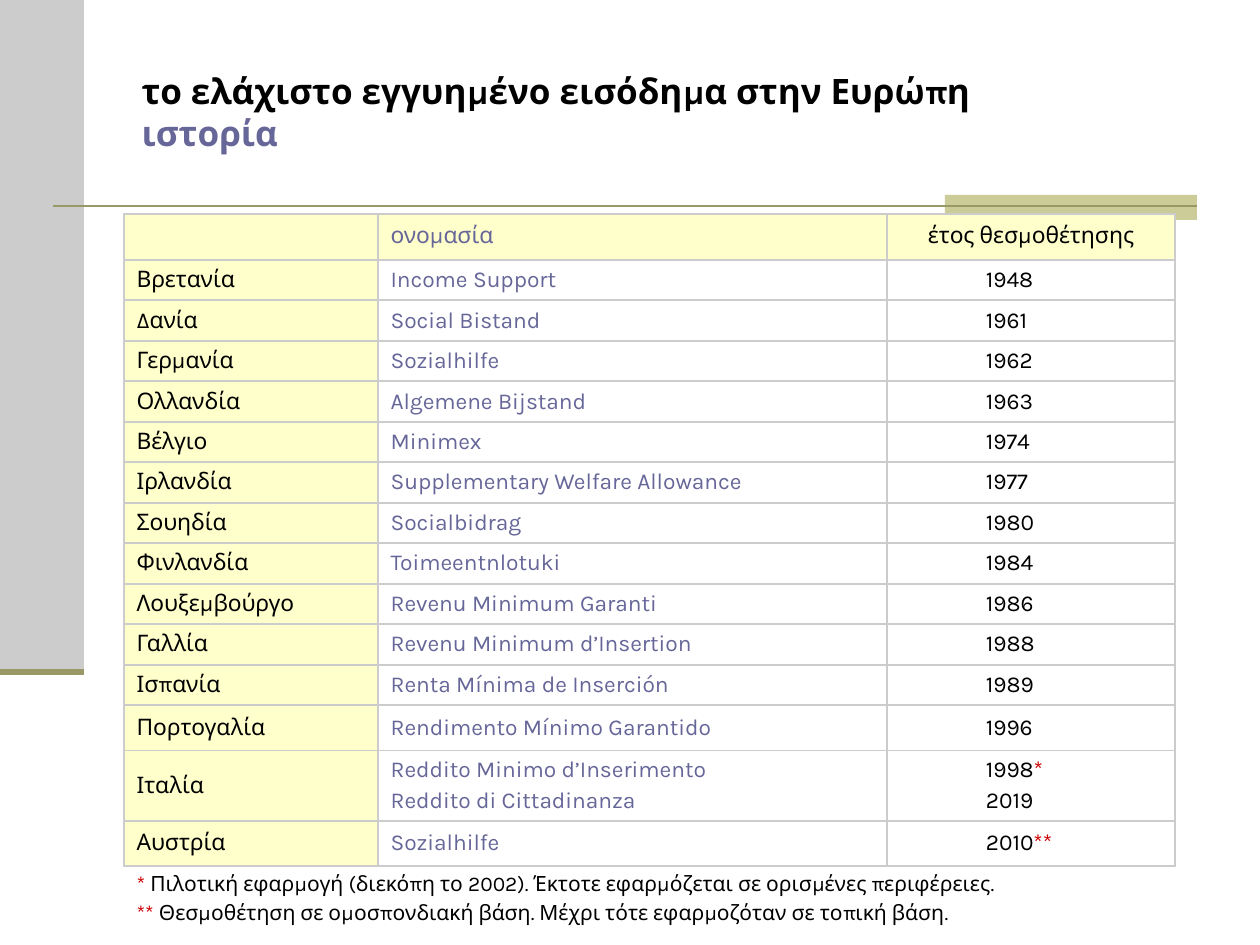
from itertools import groupby

from lxml.etree import SubElement
from pptx import Presentation
from pptx.dml.color import RGBColor
from pptx.enum.shapes import MSO_CONNECTOR, MSO_SHAPE
from pptx.enum.text import MSO_ANCHOR, MSO_AUTO_SIZE, PP_ALIGN
from pptx.oxml.ns import qn
from pptx.util import Emu, Pt

PX_PER_INCH = 126
FONT = "Karla"
BLACK = RGBColor(0x00, 0x00, 0x00)
GREY = RGBColor(0xCC, 0xCC, 0xCC)
SAND = RGBColor(0xCC, 0xCC, 0x99)
OLIVE = RGBColor(0x99, 0x99, 0x66)
VIOLET = RGBColor(0x66, 0x66, 0x99)
CREAM = RGBColor(0xFF, 0xFF, 0xCC)
RED = RGBColor(0xCC, 0x00, 0x00)

TITLE = "το ελάχιστο εγγυημένο εισόδημα στην Ευρώπη\vιστορία"
HEADER = ("", "ονομασία", "έτος θεσμοθέτησης")
SCHEMES = [
    ("Βρετανία", "Income Support", "1948"),
    ("Δανία", "Social Bistand", "1961"),
    ("Γερμανία", "Sozialhilfe", "1962"),
    ("Ολλανδία", "Algemene Bijstand", "1963"),
    ("Βέλγιο", "Minimex", "1974"),
    ("Ιρλανδία", "Supplementary Welfare Allowance", "1977"),
    ("Σουηδία", "Socialbidrag", "1980"),
    ("Φινλανδία", "Toimeentnlotuki", "1984"),
    ("Λουξεμβούργο", "Revenu Minimum Garanti", "1986"),
    ("Γαλλία", "Revenu Minimum d’Insertion", "1988"),
    ("Ισπανία", "Renta Mínima de Inserción", "1989"),
    ("Πορτογαλία", "Rendimento Mínimo Garantido", "1996"),
    ("Ιταλία", "Reddito Minimo d’Inserimento\nReddito di Cittadinanza", "1998*\n2019"),
    ("Αυστρία", "Sozialhilfe", "2010**"),
]
NOTES = (
    "* Πιλοτική εφαρμογή (διεκόπη το 2002). Έκτοτε εφαρμόζεται σε ορισμένες περιφέρειες.\n"
    "** Θεσμοθέτηση σε ομοσπονδιακή βάση. Μέχρι τότε εφαρμοζόταν σε τοπική βάση."
)
COLUMN_WIDTHS = [254, 509, 288]
ROW_HEIGHTS = [46] + [40, 41] * 5 + [40, 46, 70, 45, 65]
COLUMN_COLORS = [BLACK, VIOLET, BLACK]
YEAR_INDENT = 99


def px(length):
    return Emu(round(length * 914400 / PX_PER_INCH))


def add_bar(page, left, top, width, height, color):
    bar = page.shapes.add_shape(
        MSO_SHAPE.RECTANGLE, px(left), px(top), px(width), px(height))
    bar.shadow.inherit = False
    bar.fill.solid()
    bar.fill.fore_color.rgb = color
    bar.line.fill.background()


def add_rule(page, left, right, y, weight):
    rule = page.shapes.add_connector(
        MSO_CONNECTOR.STRAIGHT, px(left), px(y), px(right), px(y))
    rule.line.color.rgb = OLIVE
    rule.line.width = Pt(weight)
    SubElement(rule._element.spPr, qn("a:effectLst"))


def format_span(span, size, color, bold=False):
    span.font.name = FONT
    span.font.size = Pt(size)
    span.font.bold = bold
    span.font.color.rgb = color


def write_title(page):
    title = page.shapes.title
    title.left, title.top, title.width, title.height = px(129), px(14), px(1018), px(195)
    frame = title.text_frame
    frame.text = TITLE
    frame.word_wrap = True
    frame.auto_size = MSO_AUTO_SIZE.NONE
    frame.vertical_anchor = MSO_ANCHOR.MIDDLE
    para = frame.paragraphs[0]
    para.alignment = PP_ALIGN.LEFT
    for span, color in zip(para.runs, (BLACK, VIOLET)):
        format_span(span, 20, color, True)
    line_break = para._p.find(qn("a:br"))
    SubElement(line_break, qn("a:rPr"), sz="2000", b="1")


def set_borders(cell, visible):
    properties = cell._tc.get_or_add_tcPr()
    for side in "LRTB":
        line = SubElement(properties, qn(f"a:ln{side}"), w=str(Pt(1)))
        if side in visible:
            fill = SubElement(line, qn("a:solidFill"))
            SubElement(fill, qn("a:srgbClr"), val=str(GREY))
        else:
            SubElement(line, qn("a:noFill"))


def write_cell(cell, text, size, color, fill=None, borders="LRTB"):
    set_borders(cell, borders)
    if fill is None:
        cell.fill.background()
    else:
        cell.fill.solid()
        cell.fill.fore_color.rgb = fill
    cell.vertical_anchor = MSO_ANCHOR.MIDDLE
    cell.text_frame.text = text
    for index, para in enumerate(cell.text_frame.paragraphs):
        pieces = ["".join(group) for _, group in groupby(para.text, lambda c: c == "*")]
        para.text = ""
        if index:
            para.space_before = Pt(size * 0.2)
        for piece in pieces:
            span = para.add_run()
            span.text = piece
            format_span(span, size, RED if "*" in piece else color)
        if not pieces:
            SubElement(para._p, qn("a:endParaRPr"), sz=str(size * 100))


def add_scheme_table(page):
    frame = page.shapes.add_table(
        len(ROW_HEIGHTS), len(COLUMN_WIDTHS), px(124), px(214),
        px(sum(COLUMN_WIDTHS)), px(sum(ROW_HEIGHTS)))
    table = frame.table
    table.first_row = False
    table.horz_banding = False
    for column, width in zip(table.columns, COLUMN_WIDTHS):
        column.width = px(width)
    for row, height in zip(table.rows, ROW_HEIGHTS):
        row.height = px(height)

    for r, values in enumerate([HEADER] + SCHEMES):
        for c, value in enumerate(values):
            cell = table.cell(r, c)
            write_cell(cell, value, 13, COLUMN_COLORS[c], CREAM if r == 0 or c == 0 else None)
            if r == 0:
                cell.text_frame.paragraphs[0].line_spacing = 0.8
            elif c == 2:
                cell.margin_left = px(YEAR_INDENT)
    table.cell(0, 2).text_frame.paragraphs[0].alignment = PP_ALIGN.CENTER

    last = len(ROW_HEIGHTS) - 1
    table.cell(last, 0).merge(table.cell(last, 2))
    for c, text in enumerate((NOTES, "", "")):
        write_cell(table.cell(last, c), text, 12, BLACK, borders="T")


def main():
    deck = Presentation()
    deck.slide_width, deck.slide_height = px(1260), px(945)
    page = deck.slides.add_slide(deck.slide_layouts[5])
    add_bar(page, 0, 0, 84, 672, GREY)
    add_bar(page, 945, 195, 252, 25, SAND)
    add_rule(page, 53, 1197, 206, 1.5)
    add_rule(page, 0, 84, 672, 3.5)
    write_title(page)
    add_scheme_table(page)
    deck.save("out.pptx")


if __name__ == "__main__":
    main()
